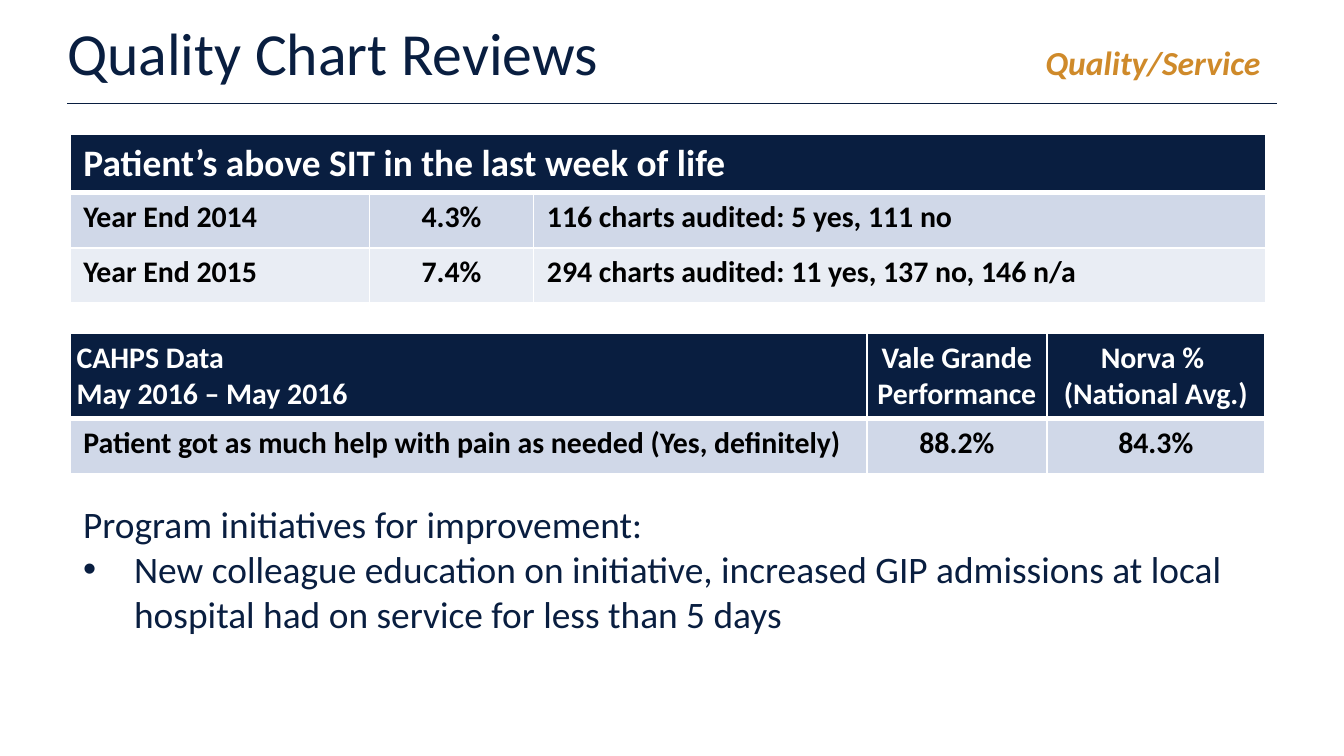
from dataclasses import dataclass

from lxml import etree
from pptx import Presentation
from pptx.dml.color import RGBColor
from pptx.enum.shapes import MSO_CONNECTOR
from pptx.enum.text import MSO_ANCHOR, MSO_AUTO_SIZE, PP_ALIGN
from pptx.oxml.ns import qn
from pptx.util import Inches, Pt

LEFT, CENTER = PP_ALIGN.LEFT, PP_ALIGN.CENTER
MIDDLE = MSO_ANCHOR.MIDDLE
GROW = MSO_AUTO_SIZE.SHAPE_TO_FIT_TEXT
STRAIGHT = MSO_CONNECTOR.STRAIGHT


@dataclass(frozen=True)
class Theme:
    font: str = "Calibri"
    navy: str = "091E40"
    gold: str = "CF8A2A"
    white: str = "FFFFFF"
    black: str = "000000"
    bands: tuple[str, ...] = ("D0D8E8", "E9EDF4")
    title: int = 32
    large: int = 20
    tag: int = 18
    cell: int = 16
    border: int = 1
    header_border: int = 3


@dataclass(frozen=True)
class TableSpec:
    top: float
    columns: tuple[float, ...]
    heights: tuple[float, ...]
    rows: tuple[tuple[str, ...], ...]
    centered: tuple[int, ...]
    header_size: int
    header_inset: float


THEME = Theme()
SLIDE_WIDTH = 10
SLIDE_HEIGHT = SLIDE_WIDTH * 9 / 16
CONTENT_LEFT = 0.52

TABLES = (
    TableSpec(
        top=1, columns=(2.23, 1.22, 5.45), heights=(0.41, 0.41, 0.41),
        rows=(
            ("Patient’s above SIT in the last week of life",),
            ("Year End 2014", "4.3%", "116 charts audited: 5 yes, 111 no"),
            ("Year End 2015", "7.4%", "294 charts audited: 11 yes, 137 no, 146 n/a"),
        ),
        centered=(1,), header_size=THEME.large, header_inset=0.1,
    ),
    TableSpec(
        top=2.48, columns=(5.93, 1.34, 1.62), heights=(0.62, 0.41),
        rows=(
            ("CAHPS Data\nMay 2016 – May 2016", "Vale Grande Performance",
             "Norva % \n(National Avg.)"),
            ("Patient got as much help with pain as needed (Yes, definitely)",
             "88.2%", "84.3%"),
        ),
        centered=(1, 2), header_size=THEME.cell, header_inset=0.05,
    ),
)


def add_run(p, text: str, size: int, color: str, bold: bool = False,
            italic: bool = False) -> None:
    """Add text to a paragraph, with a line break at each newline."""
    for i, line in enumerate(text.split("\n")):
        if i:
            p.add_line_break()
        r = p.add_run()
        r.text = line
        r.font.name = THEME.font
        r.font.size = Pt(size)
        r.font.bold = bold
        r.font.italic = italic
        r.font.color.rgb = RGBColor.from_string(color)


def add_borders(cell, bottom: int) -> None:
    tc_pr = cell._tc.get_or_add_tcPr()
    widths = {"lnL": THEME.border, "lnR": THEME.border,
              "lnT": THEME.border, "lnB": bottom}
    for side, width in widths.items():
        ln = etree.SubElement(tc_pr, qn(f"a:{side}"), w=str(Pt(width)))
        fill = etree.SubElement(ln, qn("a:solidFill"))
        etree.SubElement(fill, qn("a:srgbClr"), val=THEME.white)


def add_data_table(s, spec: TableSpec) -> None:
    table = s.shapes.add_table(
        len(spec.rows), len(spec.columns), Inches(CONTENT_LEFT), Inches(spec.top),
        Inches(sum(spec.columns)), Inches(sum(spec.heights))).table
    for column, width in zip(table.columns, spec.columns):
        column.width = Inches(width)
    for i, (height, texts) in enumerate(zip(spec.heights, spec.rows)):
        table.rows[i].height = Inches(height)
        header = i == 0
        if len(texts) < len(spec.columns):
            table.cell(i, len(texts) - 1).merge(table.cell(i, len(spec.columns) - 1))
        for j in range(len(spec.columns)):
            cell = table.cell(i, j)
            add_borders(cell, THEME.header_border if header else THEME.border)
            cell.fill.solid()
            color = THEME.navy if header else THEME.bands[(i - 1) % 2]
            cell.fill.fore_color.rgb = RGBColor.from_string(color)
            if j >= len(texts):
                continue
            if header:
                cell.margin_left = cell.margin_right = Inches(spec.header_inset)
                cell.margin_top = cell.margin_bottom = Inches(0.05)
            p = cell.text_frame.paragraphs[0]
            p.alignment = CENTER if j in spec.centered else LEFT
            add_run(p, texts[j], spec.header_size if header else THEME.cell,
                    THEME.white if header else THEME.black, bold=True)


def add_title(s, text: str, tag: str) -> None:
    """Add the title with a tag at a right tab stop, and the rule below."""
    tf = s.shapes.add_textbox(0, 0, Inches(SLIDE_WIDTH), Inches(0.77)).text_frame
    tf.word_wrap = True
    tf.vertical_anchor = MIDDLE
    tf.margin_left = tf.margin_right = Inches(0.5)
    tf.margin_top = tf.margin_bottom = Inches(0.1)
    p = tf.paragraphs[0]
    tabs = etree.SubElement(p._p.get_or_add_pPr(), qn("a:tabLst"))
    etree.SubElement(tabs, qn("a:tab"), pos=str(Inches(8.88)), algn="r")
    add_run(p, text + "\t", THEME.title, THEME.navy)
    add_run(p, tag, THEME.tag, THEME.gold, bold=True, italic=True)

    rule = s.shapes.add_connector(STRAIGHT, Inches(0.5), Inches(0.77),
                                  Inches(9.5), Inches(0.77))
    rule.line.color.rgb = RGBColor.from_string(THEME.navy)
    rule.line.width = Pt(1)
    etree.SubElement(rule._element.spPr, qn("a:effectLst"))


def add_initiatives(s, heading: str, items: tuple[str, ...]) -> None:
    tf = s.shapes.add_textbox(Inches(CONTENT_LEFT), Inches(3.68),
                              Inches(9.16), Inches(1.41)).text_frame
    tf.word_wrap = True
    tf.auto_size = GROW
    add_run(tf.paragraphs[0], heading, THEME.large, THEME.navy)
    indent = Inches(0.38)
    for item in items:
        p = tf.add_paragraph()
        p_pr = p._p.get_or_add_pPr()
        p_pr.set("marL", str(indent))
        p_pr.set("indent", str(-indent))
        etree.SubElement(p_pr, qn("a:buFont"), typeface="Arial")
        etree.SubElement(p_pr, qn("a:buChar"), char="•")
        add_run(p, item, THEME.large, THEME.navy)


def main() -> None:
    prs = Presentation()
    prs.slide_width = Inches(SLIDE_WIDTH)
    prs.slide_height = Inches(SLIDE_HEIGHT)
    s = prs.slides.add_slide(prs.slide_layouts[6])
    add_title(s, "Quality Chart Reviews", "Quality/Service")
    for spec in TABLES:
        add_data_table(s, spec)
    add_initiatives(s, "Program initiatives for improvement:", (
        "New colleague education on initiative, increased GIP admissions at "
        "local hospital had on service for less than 5 days",))
    prs.save("out.pptx")


if __name__ == "__main__":
    main()
